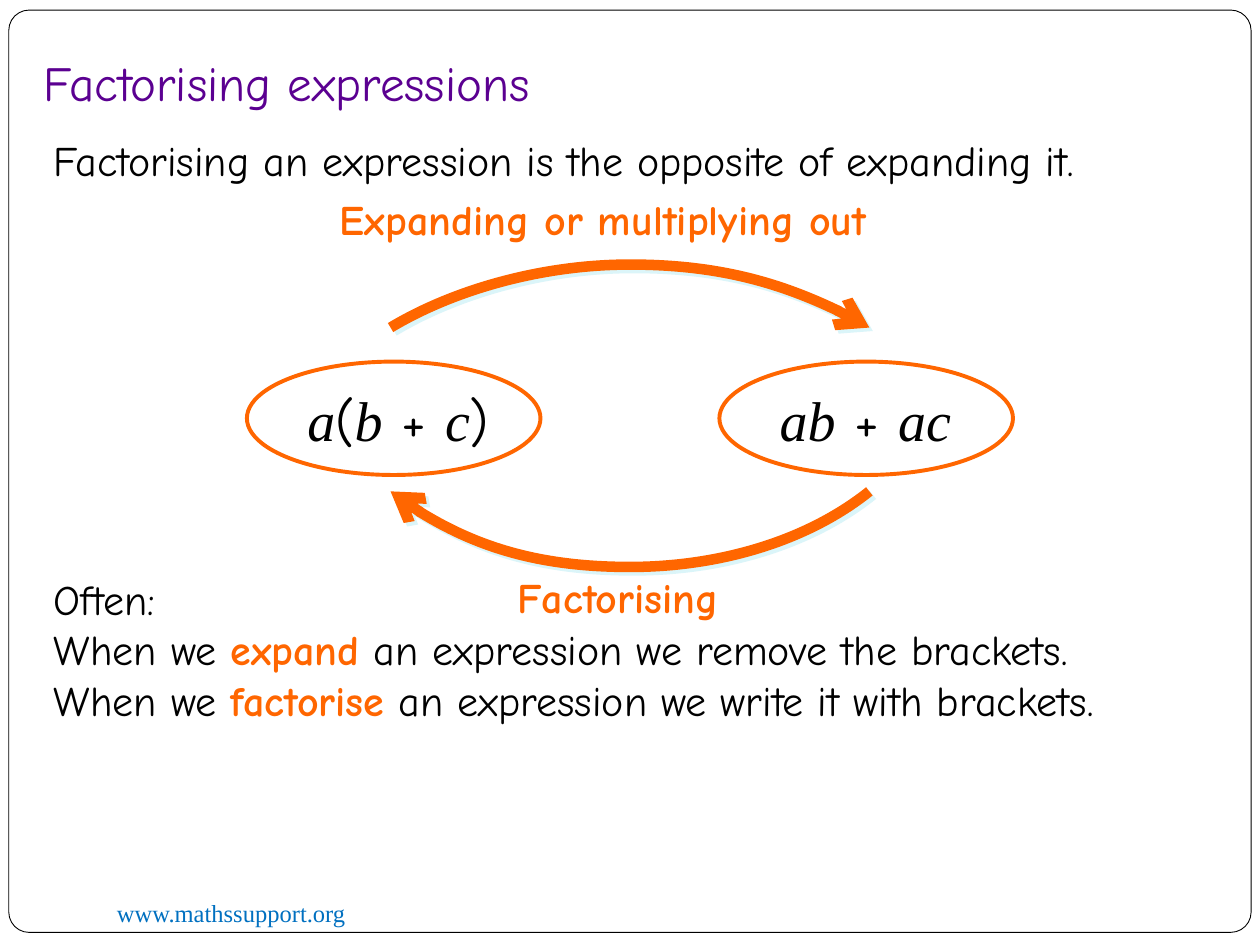
from dataclasses import dataclass

from lxml import etree
from pptx import Presentation
from pptx.dml.color import RGBColor
from pptx.enum.shapes import MSO_SHAPE
from pptx.enum.text import MSO_ANCHOR, MSO_AUTO_SIZE
from pptx.oxml.ns import qn
from pptx.util import Inches, Pt

ROUNDED, ELLIPSE = MSO_SHAPE.ROUNDED_RECTANGLE, MSO_SHAPE.OVAL
BOTTOM, GROW = MSO_ANCHOR.BOTTOM, MSO_AUTO_SIZE.SHAPE_TO_FIT_TEXT
COMIC, TIMES = "Comic Neue", "Times New Roman"
ORANGE, BLACK, WHITE = "FF6600", "000000", "FFFFFF"
PURPLE, BLUE, PALE_BLUE = "5B0091", "0070C0", "DBF5F9"
COLUMNS, ROWS = 100, 75

prs = Presentation()
prs.slide_width, prs.slide_height = Inches(10), Inches(7.5)
CELL_W, CELL_H = prs.slide_width / COLUMNS, prs.slide_height / ROWS
slide = prs.slides.add_slide(prs.slide_layouts[6])


@dataclass(frozen=True)
class Area:
    """A place on the slide, in grid columns and rows."""
    col: float
    row: float
    cols: float
    rows: float

    def emu(self) -> tuple[int, ...]:
        return (round(self.col * CELL_W), round(self.row * CELL_H),
                round(self.cols * CELL_W), round(self.rows * CELL_H))


@dataclass(frozen=True)
class Style:
    size: float
    color: str = BLACK
    font: str = COMIC
    bold: bool = False
    italic: bool = False


BODY = Style(24)
KEYWORD = Style(24, ORANGE, bold=True)
VARIABLE = Style(32, font=TIMES, italic=True)
SYMBOL = Style(32)
Line = list[tuple[str, Style]]


def rgb(color: str) -> RGBColor:
    return RGBColor.from_string(color)


def add_text(area: Area, lines: list[Line], wrap: bool = True):
    frame = slide.shapes.add_textbox(*area.emu()).text_frame
    frame.word_wrap = wrap
    frame.auto_size = GROW
    frame.text = "\n".join("" for _ in lines)
    for paragraph, line in zip(frame.paragraphs, lines):
        for words, style in line:
            run = paragraph.add_run()
            run.text = words
            font = run.font
            font.name, font.size = style.font, Pt(style.size)
            font.bold, font.italic = style.bold, style.italic
            font.color.rgb = rgb(style.color)
    return frame


def add_outline(kind: MSO_SHAPE, area: Area, color: str, width: float):
    shape = slide.shapes.add_shape(kind, *area.emu())
    shape.shadow.inherit = False
    shape.fill.background()
    shape.line.color.rgb = rgb(color)
    shape.line.width = Pt(width)
    return shape


def add_expression(ellipse: Area, text_cols: float, line: Line) -> None:
    text_area = Area(ellipse.col + 3.8, ellipse.row + 1.4, text_cols, 6.3)
    add_text(text_area, [line], wrap=False)
    add_outline(ELLIPSE, ellipse, ORANGE, 2.25)


def add_curved_arrow(points: list[tuple[float, float]]) -> None:
    """Draw a start point followed by three points for each Bezier segment."""
    builder = slide.shapes.build_freeform(*points[0], scale=(CELL_W, CELL_H))
    builder.add_line_segments(points[1:], close=False)
    arrow = builder.convert_to_shape()
    arrow.fill.background()
    arrow.line.color.rgb = rgb(ORANGE)
    arrow.line.width = Pt(6)
    etree.SubElement(arrow.line._get_or_add_ln(), qn("a:tailEnd"), type="arrow")

    steps = list(arrow._element.iter(qn("a:lnTo")))
    for first in range(0, len(steps), 3):
        curve = etree.SubElement(steps[first].getparent(), qn("a:cubicBezTo"))
        for step in steps[first:first + 3]:
            curve.append(step[0])
            step.getparent().remove(step)

    arrow.shadow.inherit = False
    effects = arrow._element.spPr.find(qn("a:effectLst"))
    shadow = etree.SubElement(effects, qn("a:outerShdw"), dist=str(Pt(2.8)),
                              dir=str(45 * 60000), algn="ctr", rotWithShape="0")
    etree.SubElement(shadow, qn("a:srgbClr"), val=PALE_BLUE)


frame_border = add_outline(ROUNDED, Area(0.7, 0.8, 98.6, 73.2), BLACK, 0.5)
frame_border.adjustments[0] = 0.022
frame_border.fill.solid()
frame_border.fill.fore_color.rgb = rgb(WHITE)

add_text(Area(8.3, 70.8, 32.5, 3.4),
         [[("www.mathssupport.org", Style(14, BLUE, TIMES))]])
title = add_text(Area(2.5, 0.4, 85.3, 9.4),
                 [[("Factorising expressions", Style(28, PURPLE))]])
title.auto_size = MSO_AUTO_SIZE.NONE
title.vertical_anchor = BOTTOM
title.margin_bottom = Inches(0.1)
add_text(Area(3.3, 10.2, 94.7, 5), [[
    ("Factorising an expression is the opposite of expanding it.", BODY)]])

add_expression(Area(19.6, 28.7, 23.3, 9), 16.5, [
    ("a", VARIABLE), ("(", SYMBOL), ("b", VARIABLE),
    (" + ", SYMBOL), ("c", VARIABLE), (")", SYMBOL)])
add_expression(Area(57.1, 28.7, 23.3, 9), 15.7, [
    ("ab", VARIABLE), (" + ", SYMBOL), ("ac", VARIABLE)])

# The lower arrow is the upper one turned half a circle about the centre.
CENTRE_COL, CENTRE_ROW = 50, 32.8
expanding_curve = [(30.6, 26.2), (35.7, 22.7), (42.7, 20.7), (49.9, 20.7),
                   (57.3, 20.7), (64.3, 22.7), (69.4, 26.2)]
factorising_curve = [(2 * CENTRE_COL - col, 2 * CENTRE_ROW - row)
                     for col, row in expanding_curve]
add_curved_arrow(expanding_curve)
add_text(Area(26, 14.9, 48, 5),
         [[("Expanding or multiplying out", KEYWORD)]], wrap=False)
add_curved_arrow(factorising_curve)
add_text(Area(40.1, 44.9, 19.7, 5.1), [[("Factorising", KEYWORD)]], wrap=False)

add_text(Area(3.3, 45, 94.7, 17.2), [
    [("Often:", BODY)],
    [("When we ", BODY), ("expand", KEYWORD),
     (" an expression we remove the brackets.", BODY)],
    [("When we ", BODY), ("factorise", KEYWORD),
     (" an expression we write it with brackets.", BODY)]])

prs.save("out.pptx")
